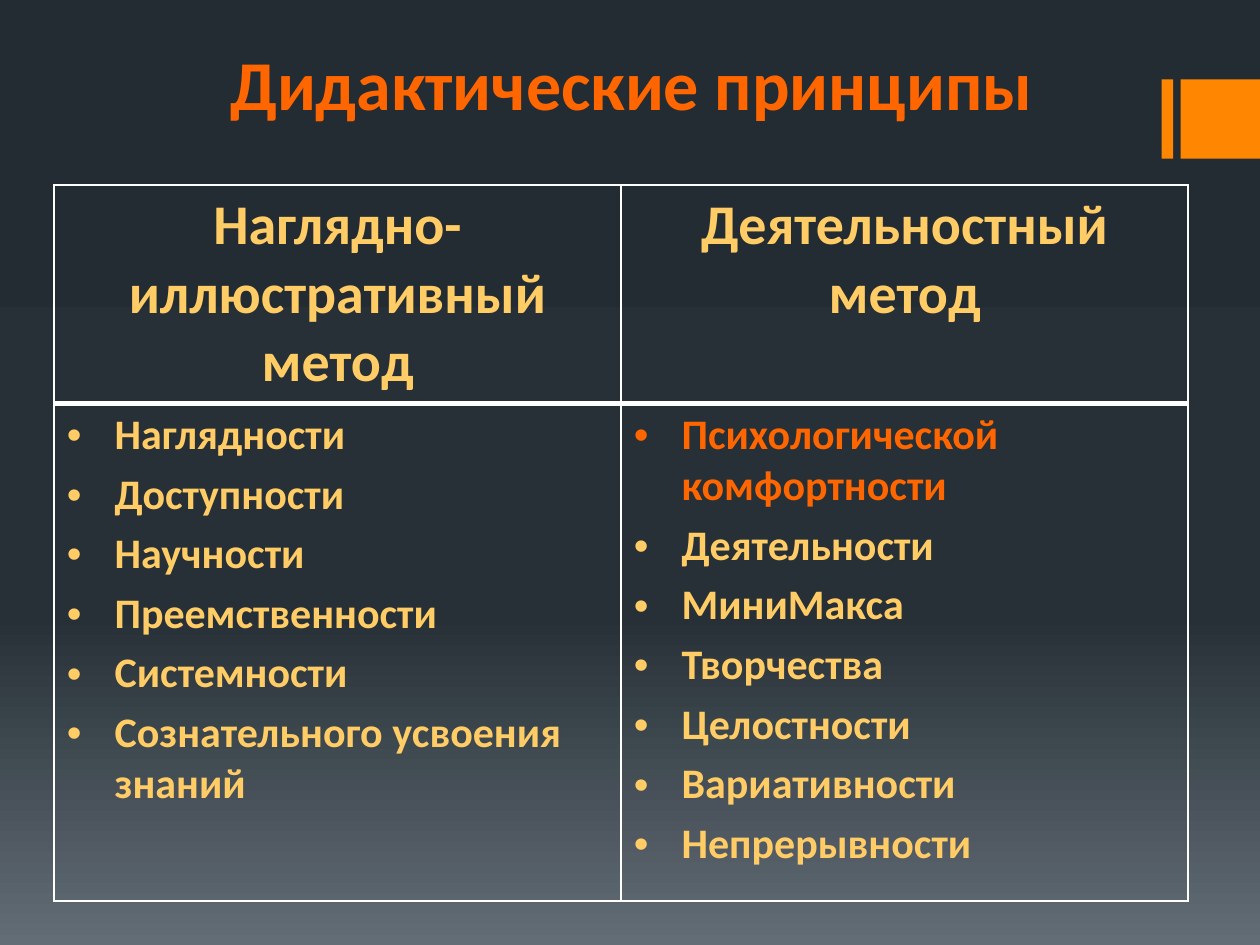
from copy import deepcopy
from dataclasses import dataclass

from lxml import etree
from pptx import Presentation
from pptx import util as u
from pptx.dml.color import RGBColor
from pptx.enum import shapes, text
from pptx.oxml.ns import qn

# Content
TITLE = "Дидактические принципы"
COLUMNS = [
    ("Наглядно-иллюстративный метод",
     ["Наглядности", "Доступности", "Научности", "Преемственности",
      "Системности", "Сознательного усвоения знаний"]),
    ("Деятельностный метод",
     ["Психологической комфортности", "Деятельности", "МиниМакса",
      "Творчества", "Целостности", "Вариативности", "Непрерывности"]),
]
HIGHLIGHTED = {"Психологической комфортности"}


@dataclass(frozen=True)
class Theme:
    font: str = "Calibri"
    title: str = "FF6600"
    body: str = "FFCC66"
    accent: str = "FF8600"
    border: str = "FFFFFF"
    background: tuple = ((0, "242C33"), (0.65, "273037"), (1, "636D76"))
    title_size: int = 40
    header_size: int = 32
    list_size: int = 24
    thin: int = 1
    thick: int = 3


THEME = Theme()

# Layout in inches
WIDTH, HEIGHT = 10, 7.5
TITLE_BOX = (0.51, 0.21, 9, 0.83)
TABLE_LEFT, TABLE_TOP, TABLE_WIDTH = 0.43, 1.47, 9
ROW_HEIGHTS = (1.73, 3.95)
MARKER_TOP, MARKER_SIZE = 0.63, 0.63
MARKERS = ((9.22, 0.09), (WIDTH - MARKER_SIZE, MARKER_SIZE))
INDENT = 0.38


def style(paragraph, size, color):
    font = paragraph.font
    for target in [font] + [run.font for run in paragraph.runs]:
        target.name, target.size, target.bold = THEME.font, u.Pt(size), True
        target.color.rgb = RGBColor.from_string(color)


def paint_background(slide):
    fill = slide.background.fill
    fill.gradient()
    fill.gradient_angle = 270
    stop_list = next(slide.element.iter(qn("a:gsLst")))
    stop_list.insert(1, deepcopy(stop_list[0]))
    for stop, (position, color) in zip(fill.gradient_stops, THEME.background):
        stop.position = position
        stop.color.rgb = RGBColor.from_string(color)


def add_bullet(paragraph):
    properties = paragraph._p.get_or_add_pPr()
    properties.set("marL", str(u.Inches(INDENT)))
    properties.set("indent", str(-u.Inches(INDENT)))
    etree.SubElement(properties, qn("a:buFont"), typeface="Arial")
    etree.SubElement(properties, qn("a:buChar"), char="•")


def set_borders(cell, widths):
    properties = cell._tc.get_or_add_tcPr()
    for index, (side, width) in enumerate(zip("LRTB", widths)):
        line = etree.Element(qn(f"a:ln{side}"), w=str(u.Pt(width)))
        fill = etree.SubElement(line, qn("a:solidFill"))
        etree.SubElement(fill, qn("a:srgbClr"), val=THEME.border)
        properties.insert(index, line)


def fill_header(cell, heading):
    cell.text_frame.text = heading
    paragraph = cell.text_frame.paragraphs[0]
    paragraph.alignment = text.PP_ALIGN.CENTER
    style(paragraph, THEME.header_size, THEME.body)


def fill_list(cell, items):
    cell.text_frame.text = "\n".join(items)
    for index, paragraph in enumerate(cell.text_frame.paragraphs):
        if index:
            paragraph.space_before = u.Pt(THEME.list_size * 0.2)
        add_bullet(paragraph)
        color = THEME.title if paragraph.text in HIGHLIGHTED else THEME.body
        style(paragraph, THEME.list_size, color)


def main():
    presentation = Presentation()
    presentation.slide_width, presentation.slide_height = u.Inches(WIDTH), u.Inches(HEIGHT)
    slide = presentation.slides.add_slide(presentation.slide_layouts[5])
    paint_background(slide)

    # Orange markers at the right edge
    for left, width in MARKERS:
        marker = slide.shapes.add_shape(
            shapes.MSO_SHAPE.RECTANGLE,
            *map(u.Inches, (left, MARKER_TOP, width, MARKER_SIZE)))
        marker.shadow.inherit = False
        marker.fill.solid()
        marker.fill.fore_color.rgb = RGBColor.from_string(THEME.accent)
        marker.line.fill.background()

    # Title
    title = slide.shapes.title
    title.left, title.top, title.width, title.height = map(u.Inches, TITLE_BOX)
    title.text_frame.text = TITLE
    title.text_frame.vertical_anchor = text.MSO_ANCHOR.BOTTOM
    title.text_frame.paragraphs[0].alignment = text.PP_ALIGN.CENTER
    style(title.text_frame.paragraphs[0], THEME.title_size, THEME.title)

    # Comparison table
    table = slide.shapes.add_table(
        len(ROW_HEIGHTS), len(COLUMNS),
        *map(u.Inches, (TABLE_LEFT, TABLE_TOP, TABLE_WIDTH, sum(ROW_HEIGHTS)))).table
    table.horz_banding = False
    for row, height in zip(table.rows, ROW_HEIGHTS):
        row.height = u.Inches(height)
    for column, (heading, items) in enumerate(COLUMNS):
        header, body = table.cell(0, column), table.cell(1, column)
        fill_header(header, heading)
        fill_list(body, items)
        for cell in (header, body):
            cell.fill.background()
        set_borders(header, (THEME.thin, THEME.thin, THEME.thin, THEME.thick))
        set_borders(body, (THEME.thin, THEME.thin, THEME.thick, THEME.thin))

    presentation.save("out.pptx")


if __name__ == "__main__":
    main()
